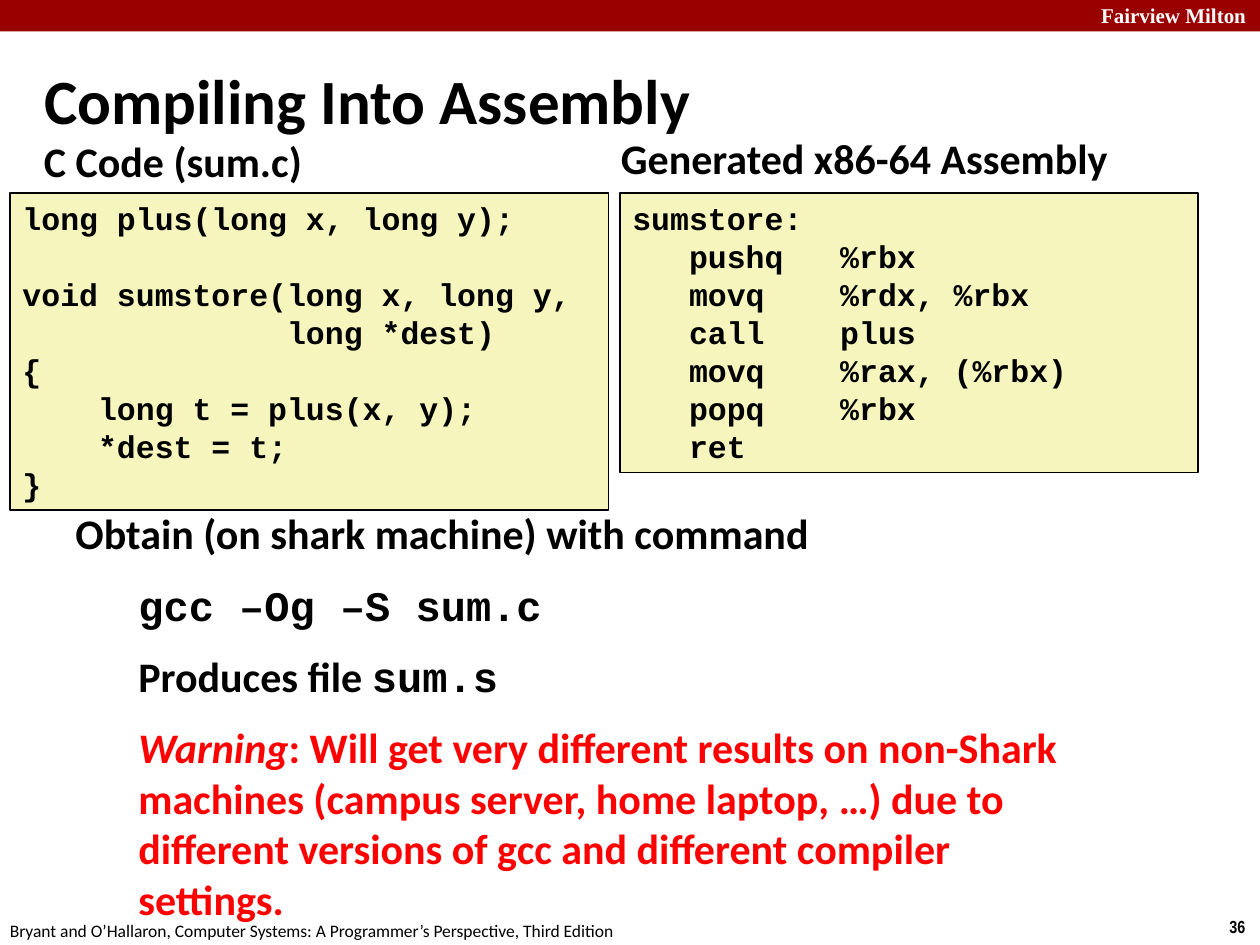
import pptx
import pptx.util
import pptx.dml.color
import pptx.enum.shapes
import pptx.enum.text

COLORS = {"band": "990000", "code": "F6F5BD", "text": "000000",
          "light": "FFFFFF", "warning": "FF0000"}

presentation = pptx.Presentation()
presentation.slide_width = pptx.util.Inches(10)
presentation.slide_height = pptx.util.Inches(7.5)
slide = presentation.slides.add_slide(presentation.slide_layouts[5])

# Grid of 100 columns and 75 rows
column = presentation.slide_width / 100
row = presentation.slide_height / 75


def add_box(left, top, width, height, fill=None, line=None):
    """Add a rectangle, placed in columns and rows, with top-left text."""
    shape = slide.shapes.add_shape(
        pptx.enum.shapes.MSO_SHAPE.RECTANGLE,
        int(left * column), int(top * row), int(width * column), int(height * row))
    shape.shadow.inherit = False
    for part, color in ((shape.fill, fill), (shape.line.fill, line)):
        if color:
            part.solid()
            part.fore_color.rgb = pptx.dml.color.RGBColor.from_string(COLORS[color])
        else:
            part.background()
    if line:
        shape.line.width = pptx.util.Pt(1)
    shape.text_frame.word_wrap = True
    shape.text_frame.vertical_anchor = pptx.enum.text.MSO_ANCHOR.TOP
    return shape


def add_run(paragraph, text, size, font="Calibri", color="text", bold=True, italic=False):
    """Add a formatted run to a left-aligned paragraph."""
    paragraph.alignment = pptx.enum.text.PP_ALIGN.LEFT
    run = paragraph.add_run()
    run.text = text
    run.font.name = font
    run.font.size = pptx.util.Pt(size)
    run.font.bold = bold
    run.font.italic = italic
    run.font.color.rgb = pptx.dml.color.RGBColor.from_string(COLORS[color])


# Top band
add_box(0, 0, 100, 2.5, fill="band")

# Title
title = slide.shapes.title
title.left, title.top = int(2.5 * column), int(4.8 * row)
title.width, title.height = int(74.9 * column), int(6.1 * row)
title.text_frame.auto_size = pptx.enum.text.MSO_AUTO_SIZE.NONE
title.text_frame.vertical_anchor = pptx.enum.text.MSO_ANCHOR.MIDDLE
add_run(title.text_frame.paragraphs[0], "Compiling Into Assembly", 36)

# Header, footer, slide number and code headings
labels = [
    ((86.4, -0.3, 14.3, 3), "Fairview Milton", 12, "Times New Roman", "light", True),
    ((96.6, 72.2, 3.4, 2.7), "36", 10, "Arial Narrow", "text", True),
    ((-0.2, 72.5, 50.8, 2.7),
     "Bryant and O’Hallaron, Computer Systems: A Programmer’s Perspective, Third Edition",
     10, "Calibri", "text", False),
    ((2.5, 10.3, 26.7, 4), "C Code (sum.c)", 24, "Calibri", "text", True),
    ((48.3, 10, 45, 4.5), "Generated x86-64 Assembly", 24, "Calibri", "text", True),
]
for place, text, size, font, color, bold in labels:
    label = add_box(*place)
    label.text_frame.word_wrap = False
    add_run(label.text_frame.paragraphs[0], text, size, font, color, bold)

# Code listings; a line marked True opens a new block
LINE_PITCH = pptx.util.Pt(21.7)
listings = [
    ((0.8, 15.3, 47.5, 25.2), [
        ("long plus(long x, long y);", False),
        ("void sumstore(long x, long y,", True),
        ("              long *dest)", False),
        ("{", False),
        ("    long t = plus(x, y);", False),
        ("    *dest = t;", False),
        ("}", False)]),
    ((49.2, 15.3, 45.9, 22.2), [
        ("sumstore:", False),
        ("   pushq   %rbx", False),
        ("   movq    %rdx, %rbx", False),
        ("   call    plus", False),
        ("   movq    %rax, (%rbx)", False),
        ("   popq    %rbx", False),
        ("   ret", False)]),
]
for place, lines in listings:
    frame = add_box(*place, fill="code", line="text").text_frame
    for index, (text, opens_block) in enumerate(lines):
        paragraph = frame.add_paragraph() if index else frame.paragraphs[0]
        paragraph.line_spacing = LINE_PITCH
        if opens_block:
            paragraph.space_before = LINE_PITCH
        add_run(paragraph, text, 18, "Courier New")

# Command and warning; each run is text, font, colour, italic
notes = [
    [("Obtain (on shark machine) with command", "Calibri", "text", False)],
    [("gcc –Og –S sum.c", "Courier New", "text", False)],
    [("Produces file ", "Calibri", "text", False),
     ("sum.s", "Courier New", "text", False)],
    [("Warning", "Calibri", "warning", True),
     (": Will get very different results on non-Shark machines "
      "(campus server, home laptop, …) due to different versions of gcc "
      "and different compiler settings.", "Calibri", "warning", False)],
]
frame = add_box(5, 39.8, 81.7, 35.2).text_frame
for index, runs in enumerate(notes):
    paragraph = frame.add_paragraph() if index else frame.paragraphs[0]
    if index:
        paragraph.space_before = pptx.util.Pt(12)
        paragraph.level = 1
        properties = paragraph._p.get_or_add_pPr()
        properties.set("marL", str(pptx.util.Inches(0.5)))
        properties.set("indent", "0")
    for text, font, color, italic in runs:
        add_run(paragraph, text, 24, font, color, italic=italic)

presentation.save("out.pptx")
